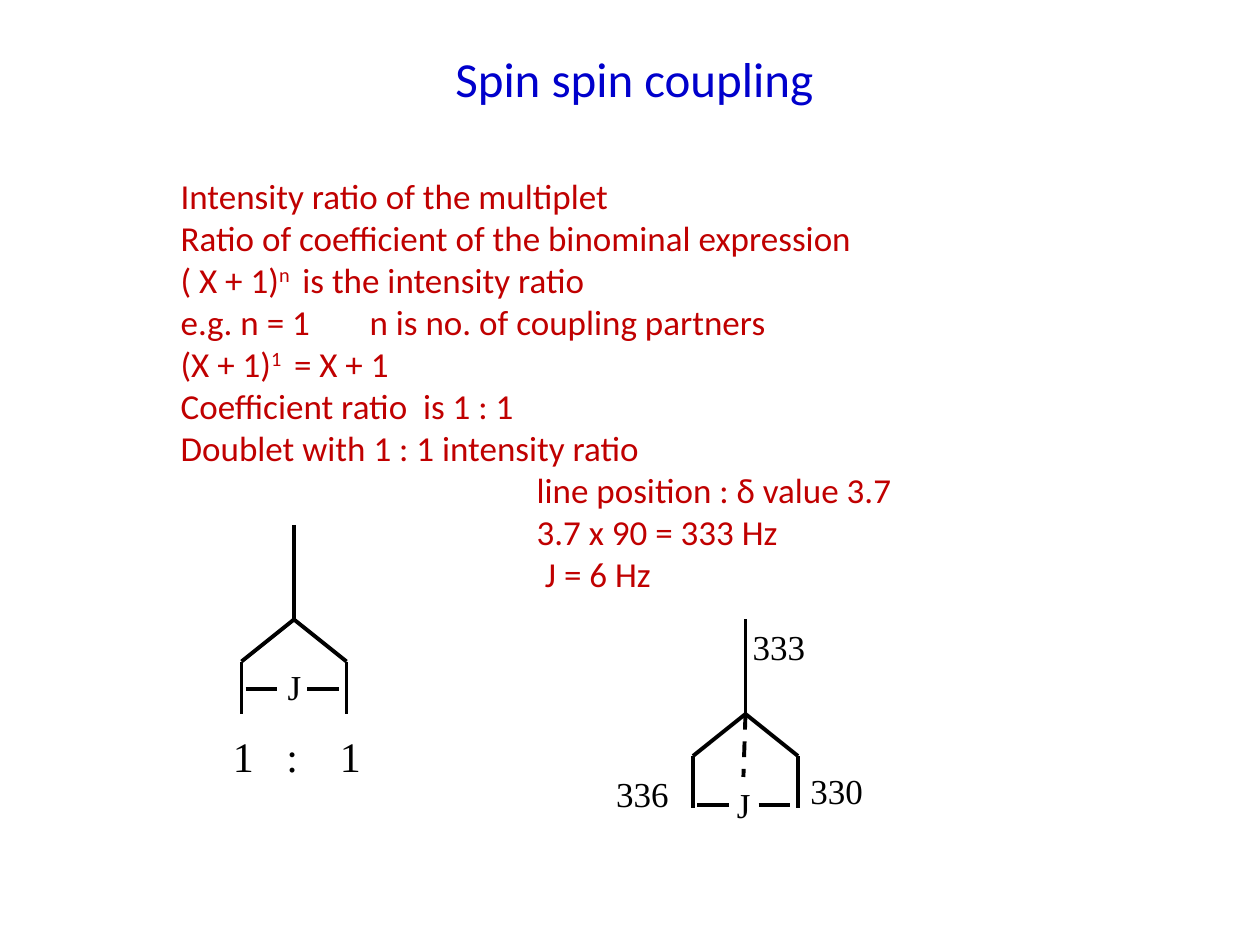
from dataclasses import dataclass

from lxml.etree import SubElement
from pptx import Presentation
from pptx.dml.color import RGBColor
from pptx.enum.dml import MSO_LINE
from pptx.enum.shapes import MSO_CONNECTOR
from pptx.enum.text import MSO_ANCHOR, MSO_AUTO_SIZE, PP_ALIGN
from pptx.oxml.ns import qn
from pptx.util import Inches, Pt

BLUE = RGBColor(0x00, 0x00, 0xCC)
RED = RGBColor(0xC0, 0x00, 0x00)
BLACK = RGBColor(0x00, 0x00, 0x00)
SANS, SERIF = "Calibri", "Times New Roman"

WIDTH, HEIGHT = Inches(10), Inches(7.5)
COLUMNS, ROWS = 120, 90


@dataclass(frozen=True)
class Label:
    """Text whose box starts at a grid column and row."""
    text: str
    column: float
    row: float
    columns: float = 7.4
    rows: float = 5.3
    size: int = 20
    tabs: tuple[float, ...] = ()


@dataclass(frozen=True)
class Fork:
    """A splitting tree, placed by the point where its stem divides."""
    column: float
    row: float
    coupling_row: float
    labels: tuple[Label, ...]
    centre_dash: bool = False


@dataclass(frozen=True)
class BodyLine:
    """Segments alternate between normal and superscript."""
    segments: tuple[str, ...]
    indent: float = 0
    tabs: tuple[float, ...] = ()


BODY = (
    BodyLine(("Intensity ratio of the multiplet",)),
    BodyLine(("Ratio of coefficient of the binominal expression",)),
    BodyLine(("( X + 1)", "n ", " is the intensity ratio")),
    BodyLine(("e.g. n = 1\tn is no. of coupling partners",), tabs=(19.1,)),
    BodyLine(("(X + 1)", "1 ", " = X + 1")),
    BodyLine(("Coefficient ratio  is 1 : 1",)),
    BodyLine(("Doublet with 1 : 1 intensity ratio",)),
    BodyLine(("line position : δ value 3.7",), indent=33.9),
    BodyLine(("3.7 x 90 = 333 Hz",), indent=33.9),
    BodyLine(("J = 6 Hz",), indent=34.7),
)

FORKS = (
    Fork(28, 59, 65.6, (
        Label("J", 26.2, 62.8, columns=3.7),
        Label("1\t:\t1", 21, 69, columns=14.6, rows=6, size=24, tabs=(5.1, 10.2)),
    )),
    Fork(71, 68, 76.7, (
        Label("J", 69, 74, columns=3.7),
        Label("333", 70.5, 59),
        Label("330", 76, 72.7),
        Label("336", 57.5, 73),
    ), centre_dash=True),
)


def across(columns: float) -> int:
    return round(WIDTH * columns / COLUMNS)


def down(rows: float) -> int:
    return round(HEIGHT * rows / ROWS)


def place(shape, column: float, row: float, columns: float, rows: float) -> None:
    shape.left, shape.top = across(column), down(row)
    shape.width, shape.height = across(columns), down(rows)


def format_runs(paragraph, size: int, name: str, color: RGBColor) -> None:
    for run in paragraph.runs:
        run.font.size = Pt(size)
        run.font.name = name
        run.font.color.rgb = color


def add_tab_stops(paragraph, tabs: tuple[float, ...]) -> None:
    if tabs:
        tab_list = SubElement(paragraph._p.get_or_add_pPr(), qn("a:tabLst"))
        for tab in tabs:
            SubElement(tab_list, qn("a:tab"), pos=str(across(tab)), algn="l")


def fill_title(title) -> None:
    place(title, 42, 4, 36.8, 6.8)
    frame = title.text_frame
    frame.text = "Spin spin coupling"
    frame.word_wrap = False
    frame.auto_size = MSO_AUTO_SIZE.NONE
    frame.vertical_anchor = MSO_ANCHOR.TOP
    format_runs(frame.paragraphs[0], 28, SANS, BLUE)


def fill_body(body) -> None:
    place(body, 16, 16, 70.7, 41.6)
    frame = body.text_frame
    frame.text = "\n".join(line.segments[0] for line in BODY)
    frame.word_wrap = True
    frame.auto_size = MSO_AUTO_SIZE.NONE
    for paragraph, line in zip(frame.paragraphs, BODY):
        for index, segment in enumerate(line.segments[1:], start=1):
            run = paragraph.add_run()
            run.text = segment
            if index % 2:
                run._r.get_or_add_rPr().set("baseline", "30000")
        paragraph.space_before = Pt(0)
        properties = paragraph._p.get_or_add_pPr()
        properties.set("marL", str(across(line.indent)))
        properties.set("indent", "0")
        SubElement(properties, qn("a:buNone"))
        add_tab_stops(paragraph, line.tabs)
        format_runs(paragraph, 20, SANS, RED)


def add_label(shapes, label: Label) -> None:
    box = shapes.add_textbox(across(label.column), down(label.row),
                             across(label.columns), down(label.rows))
    frame = box.text_frame
    frame.text = label.text
    frame.word_wrap = False
    paragraph = frame.paragraphs[0]
    paragraph.alignment = PP_ALIGN.LEFT
    add_tab_stops(paragraph, label.tabs)
    format_runs(paragraph, label.size, SERIF, BLACK)


def add_line(shapes, start: tuple[float, float], end: tuple[float, float],
             dashed: bool = False) -> None:
    line = shapes.add_connector(MSO_CONNECTOR.STRAIGHT,
                                across(start[0]), down(start[1]),
                                across(end[0]), down(end[1]))
    line.line.color.rgb = BLACK
    line.line.width = Pt(2.25)
    if dashed:
        line.line.dash_style = MSO_LINE.DASH
    SubElement(line._element.spPr, qn("a:effectLst"))


def add_fork(shapes, fork: Fork) -> None:
    group = shapes.add_group_shape().shapes
    column, row = fork.column, fork.row
    add_line(group, (column, row - 9), (column, row))
    for side in (-5, 5):
        shoulder = (column + side, row + 4)
        add_line(group, (column, row), shoulder)
        add_line(group, shoulder, (column + side, row + 9))
    for offset in (-4.6, 1.25):
        add_line(group, (column + offset, fork.coupling_row),
                 (column + offset + 3, fork.coupling_row))
    if fork.centre_dash:
        add_line(group, (column, row), (column - 0.2, row + 6), dashed=True)
    for label in fork.labels:
        add_label(group, label)


def main() -> None:
    presentation = Presentation()
    presentation.slide_width, presentation.slide_height = WIDTH, HEIGHT
    slide = presentation.slides.add_slide(presentation.slide_layouts[1])
    fill_title(slide.shapes.title)
    fill_body(slide.placeholders[1])
    for fork in FORKS:
        add_fork(slide.shapes, fork)
    presentation.save("out.pptx")


if __name__ == "__main__":
    main()
